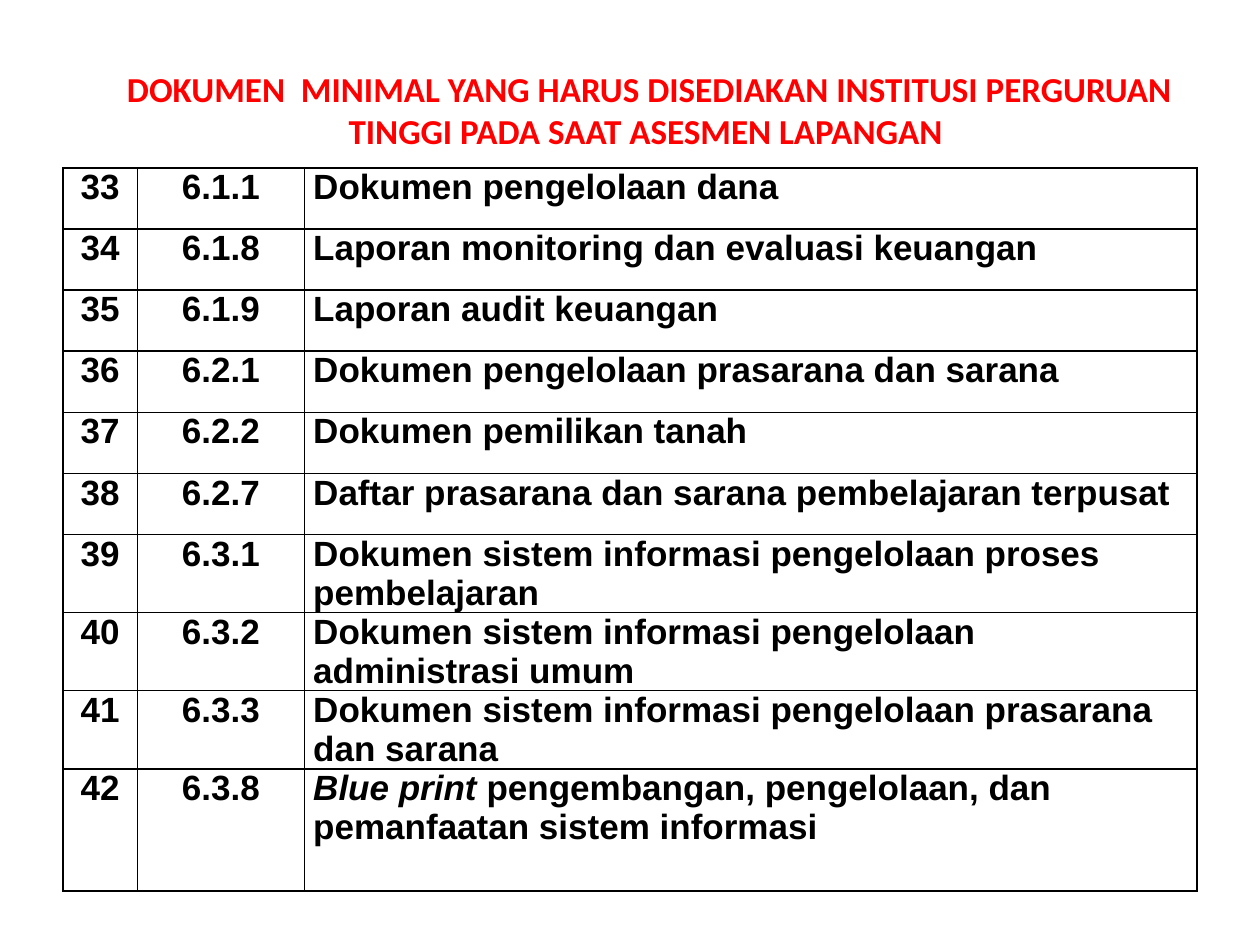
from pptx import Presentation
from pptx.dml.color import RGBColor
from pptx.enum.text import MSO_ANCHOR, PP_ALIGN
from pptx.oxml.ns import qn
from pptx.util import Pt
from lxml.etree import SubElement

COLORS = {"title": "FF0000", "text": "000000", "border": "000000"}
TITLE = (" DOKUMEN  MINIMAL YANG HARUS DISEDIAKAN INSTITUSI PERGURUAN "
         "TINGGI PADA SAAT ASESMEN LAPANGAN")
FIRST_NUMBER = 33
DOCUMENTS = [
    ("6.1.1", [("Dokumen pengelolaan dana", False)]),
    ("6.1.8", [("Laporan monitoring dan evaluasi keuangan", False)]),
    ("6.1.9", [("Laporan audit keuangan", False)]),
    ("6.2.1", [("Dokumen pengelolaan prasarana dan sarana", False)]),
    ("6.2.2", [("Dokumen pemilikan tanah", False)]),
    ("6.2.7", [("Daftar prasarana dan sarana pembelajaran terpusat", False)]),
    ("6.3.1", [("Dokumen sistem informasi pengelolaan proses pembelajaran", False)]),
    ("6.3.2", [("Dokumen sistem informasi pengelolaan administrasi umum", False)]),
    ("6.3.3", [("Dokumen sistem informasi pengelolaan prasarana dan sarana", False)]),
    ("6.3.8", [("Blue print", True),
               (" pengembangan, pengelolaan, dan pemanfaatan sistem informasi", False)]),
]
COLUMN_WIDTHS = [42.5, 95.5, 510]
ROW_HEIGHTS = [34.9] * 9 + [69.8]


class SlideBuilder:
    size = 20

    def __init__(self, s):
        self.s = s

    def add_runs(self, tf, runs, font, color, align):
        p = tf.paragraphs[0]
        p.alignment = align
        for text, italic in runs:
            r = p.add_run()
            r.text = text
            r.font.name = font
            r.font.size = Pt(self.size)
            r.font.bold = True
            r.font.italic = italic
            r.font.color.rgb = RGBColor.from_string(COLORS[color])

    def title(self, text, left, top, width, height):
        sp = self.s.shapes.add_textbox(Pt(left), Pt(top), Pt(width), Pt(height))
        tf = sp.text_frame
        tf.word_wrap = True
        tf.vertical_anchor = MSO_ANCHOR.MIDDLE
        tf.margin_bottom = Pt(28)
        self.add_runs(tf, [(text, False)], "Calibri", "title", PP_ALIGN.CENTER)

    def borders(self, cell):
        tc_pr = cell._tc.get_or_add_tcPr()
        for side in ("a:lnL", "a:lnR", "a:lnT", "a:lnB"):
            ln = SubElement(tc_pr, qn(side), w=str(Pt(1)))
            fill = SubElement(ln, qn("a:solidFill"))
            SubElement(fill, qn("a:srgbClr"), val=COLORS["border"])

    def cell(self, cell, runs, align):
        cell.margin_left = cell.margin_right = Pt(5)
        cell.margin_top = cell.margin_bottom = Pt(0)
        self.borders(cell)
        cell.fill.background()
        self.add_runs(cell.text_frame, runs, "Arial", "text", align)

    def table(self, rows, left, top, widths, heights):
        table = self.s.shapes.add_table(
            len(rows), len(widths), Pt(left), Pt(top),
            Pt(sum(widths)), Pt(sum(heights))).table
        table.first_row = table.horz_banding = False
        for column, width in zip(table.columns, widths):
            column.width = Pt(width)
        aligns = (PP_ALIGN.CENTER, PP_ALIGN.CENTER, PP_ALIGN.LEFT)
        for row, height, values in zip(table.rows, heights, rows):
            row.height = Pt(height)
            for cell, runs, align in zip(row.cells, values, aligns):
                self.cell(cell, runs, align)


def main():
    prs = Presentation()
    prs.slide_width, prs.slide_height = Pt(720), Pt(540)
    builder = SlideBuilder(prs.slides.add_slide(prs.slide_layouts[6]))
    rows = [([(str(number), False)], [(code, False)], runs)
            for number, (code, runs) in enumerate(DOCUMENTS, FIRST_NUMBER)]
    builder.table(rows, 36, 96, COLUMN_WIDTHS, ROW_HEIGHTS)
    builder.title(TITLE, 48, 36, 642, 78)
    prs.save("out.pptx")


if __name__ == "__main__":
    main()
